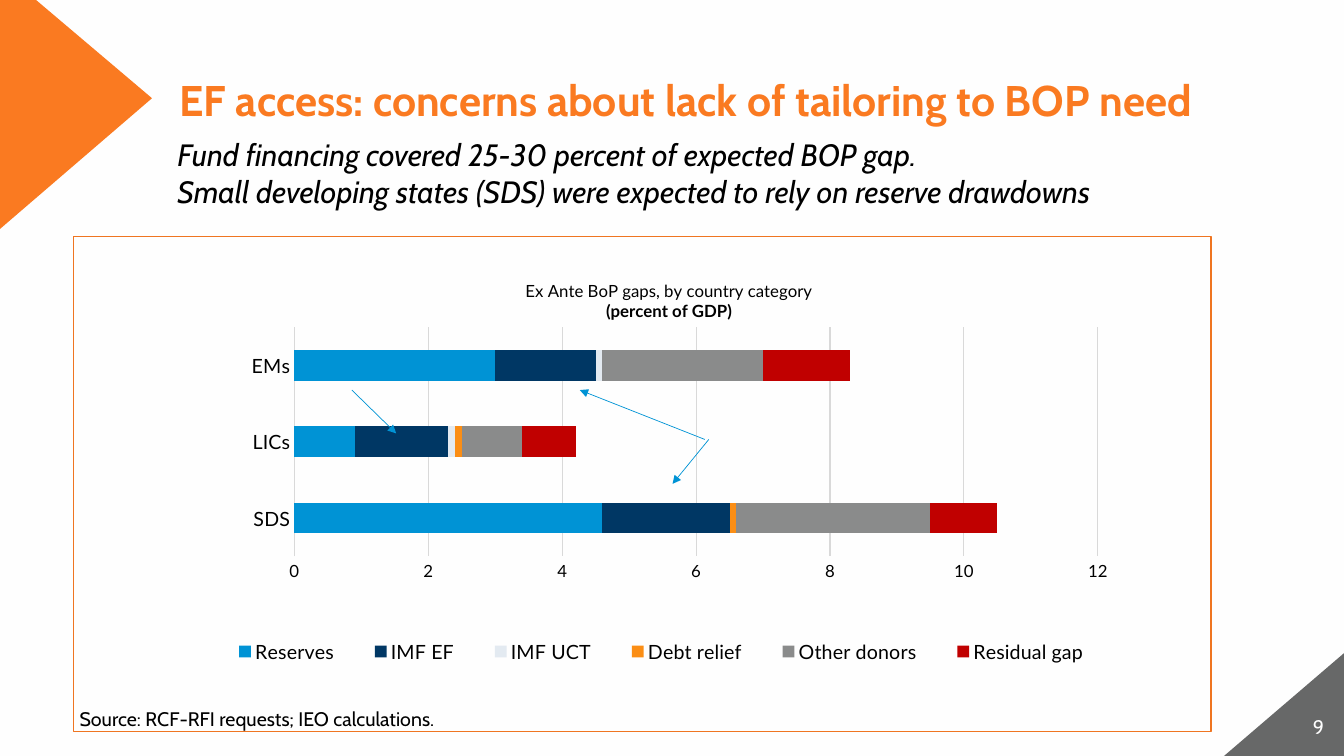
from lxml import etree
from pptx import Presentation
from pptx.chart.data import CategoryChartData
from pptx.dml.color import RGBColor
from pptx.enum.chart import XL_CHART_TYPE, XL_LEGEND_POSITION, XL_TICK_MARK
from pptx.enum.shapes import MSO_CONNECTOR, MSO_SHAPE
from pptx.enum.text import MSO_ANCHOR, PP_ALIGN
from pptx.oxml.ns import qn
from pptx.util import Inches, Pt

STACKED = XL_CHART_TYPE.BAR_STACKED
BOTTOM_LEGEND = XL_LEGEND_POSITION.BOTTOM
NO_TICK = XL_TICK_MARK.NONE
STRAIGHT = MSO_CONNECTOR.STRAIGHT
RECTANGLE = MSO_SHAPE.RECTANGLE
TOP, BOTTOM = MSO_ANCHOR.TOP, MSO_ANCHOR.BOTTOM
LEFT, RIGHT = PP_ALIGN.LEFT, PP_ALIGN.RIGHT

PAPER = RGBColor(0xFE, 0xFE, 0xFE)
INK = RGBColor(0x00, 0x00, 0x00)
ORANGE = RGBColor(0xFA, 0x7A, 0x21)
FRAME_ORANGE = RGBColor(0xEF, 0x75, 0x21)
CORNER_GRAY = RGBColor(0x67, 0x68, 0x68)
GRID_GRAY = RGBColor(0xD9, 0xD9, 0xD9)
BLUE = RGBColor(0x00, 0x93, 0xD5)
NAVY = RGBColor(0x00, 0x37, 0x64)
PALE = RGBColor(0xE3, 0xEA, 0xF1)
AMBER = RGBColor(0xFB, 0x8E, 0x15)
GRAY = RGBColor(0x8A, 0x8B, 0x8B)
RED = RGBColor(0xC0, 0x00, 0x00)
SLIDE_FONT, CHART_FONT = "Cabin", "Lato"

TITLE = "EF access: concerns about lack of tailoring to BOP need"
SUBTITLE = [
    "Fund financing covered 25-30 percent of expected BOP gap.",
    "Small developing states (SDS) were expected to rely on reserve drawdowns",
]
SOURCE = "Source: RCF-RFI requests; IEO calculations."
PAGE = "9"
CHART_TITLE = [("Ex Ante BoP gaps, by country category", False), ("(percent of GDP)", True)]
COUNTRY_GROUPS = ["SDS", "LICs", "EMs"]
FINANCING = [
    ("Reserves", (4.6, 0.9, 3), BLUE),
    ("IMF EF", (1.9, 1.4, 1.5), NAVY),
    ("IMF UCT", (0, 0.1, 0.1), PALE),
    ("Debt relief", (0.1, 0.1, 0), AMBER),
    ("Other donors", (2.9, 0.9, 2.4), GRAY),
    ("Residual gap", (1, 0.8, 1.3), RED),
]

# Positions are percentages of the slide's width and height.
TITLE_AREA = (13.35, 5.33, 80.2, 12)
SUBTITLE_AREA = (11.55, 17.33, 84.62, 11.33)
FRAME_AREA = (5.48, 31.33, 84.62, 65.47)
CHART_AREA = (12.3, 34.13, 73.82, 57.2)
SOURCE_AREA = (5.18, 92.8, 28.36, 4.53)
PAGE_AREA = (93.85, 93.87, 5.4, 4.53)
CORNERS = [
    (CORNER_GRAY, [(91.07, 100), (100, 86.4), (100, 100)]),
    (ORANGE, [(0, 0), (2.68, 0), (11.31, 13), (0, 30.29)]),
]
ARROWS = [
    ((52.44, 58.13), (43.14, 51.6)),
    ((52.74, 58.13), (50.04, 64)),
    ((26.18, 51.6), (29.48, 57.33)),
]

deck = Presentation()
deck.slide_width, deck.slide_height = Inches(13.33), Inches(7.5)
slide = deck.slides.add_slide(deck.slide_layouts[6])
slide.background.fill.solid()
slide.background.fill.fore_color.rgb = PAPER


def at(x, y):
    return round(deck.slide_width * x / 100), round(deck.slide_height * y / 100)


def spot(area):
    return *at(*area[:2]), *at(*area[2:])


def style_font(font, size, face=SLIDE_FONT, color=INK, bold=False, italic=False):
    font.size, font.name, font.bold, font.italic = Pt(size), face, bold, italic
    font.color.rgb = color


def write(shape, lines, size, anchor=TOP, align=LEFT, wrap=True, inset=0.1, indent=0, spacing=1, **style):
    frame = shape.text_frame
    frame.word_wrap, frame.vertical_anchor = wrap, anchor
    frame.margin_left = Inches(inset)
    for number, line in enumerate(lines):
        paragraph = frame.add_paragraph() if number else frame.paragraphs[0]
        paragraph.alignment, paragraph.line_spacing = align, spacing
        paragraph._p.get_or_add_pPr().set("marL", str(Inches(indent)))
        run = paragraph.add_run()
        run.text = line
        style_font(run.font, size, **style)


def add_panel(area, outline):
    panel = slide.shapes.add_shape(RECTANGLE, *spot(area))
    panel.shadow.inherit = False
    panel.fill.solid()
    panel.fill.fore_color.rgb = PAPER
    panel.line.color.rgb, panel.line.width = outline, Pt(1)
    return panel


def set_layout(part, index, inner=False, **shares):
    for old in part.findall(qn("c:layout")):
        part.remove(old)
    layout = etree.Element(qn("c:layout"))
    manual = etree.SubElement(layout, qn("c:manualLayout"))
    settings = {"layoutTarget": "inner"} if inner else {}
    settings.update(xMode="edge", yMode="edge", **shares)
    for tag, value in settings.items():
        etree.SubElement(manual, qn("c:" + tag)).set("val", str(value))
    part.insert(index, layout)


def add_gap_chart():
    gaps = CategoryChartData()
    gaps.categories = COUNTRY_GROUPS
    for name, values, _ in FINANCING:
        gaps.add_series(name, values)
    chart = slide.shapes.add_chart(STACKED, *spot(CHART_AREA), gaps).chart
    style_font(chart.font, 9, CHART_FONT)
    bars = chart.plots[0]
    bars.gap_width, bars.overlap, bars.vary_by_categories = 150, 100, False
    for series, (_, _, color) in zip(bars.series, FINANCING):
        series.format.fill.solid()
        series.format.fill.fore_color.rgb = color

    groups, percent = chart.category_axis, chart.value_axis
    for axis, size in ((groups, 14), (percent, 12)):
        axis.major_tick_mark = axis.minor_tick_mark = NO_TICK
        style_font(axis.tick_labels.font, size, CHART_FONT)
    percent.minimum_scale, percent.maximum_scale, percent.major_unit = 0, 12, 2
    percent.tick_labels.number_format = "0"
    percent.tick_labels.number_format_is_linked = False
    percent.format.line.fill.background()
    for line in (groups.format.line, percent.major_gridlines.format.line):
        line.color.rgb, line.width = GRID_GRAY, Pt(0.75)

    heading = chart.chart_title.text_frame
    for number, (text, bold) in enumerate(CHART_TITLE):
        paragraph = heading.add_paragraph() if number else heading.paragraphs[0]
        run = paragraph.add_run()
        run.text = text
        style_font(run.font, 12, CHART_FONT, bold=bold)
    chart.has_legend = True
    chart.legend.position, chart.legend.include_in_layout = BOTTOM_LEGEND, False
    style_font(chart.legend.font, 14, CHART_FONT)
    set_layout(chart.chart_title._element, 1, x=0.36, y=0.04)
    set_layout(chart.legend._element, 1, x=0.04, y=0.86, w=0.92, h=0.1)
    set_layout(chart._chartSpace.chart.plotArea, 0, inner=True, x=0.13, y=0.16, w=0.81, h=0.53)


def add_arrow(start, end):
    arrow = slide.shapes.add_connector(STRAIGHT, *at(*start), *at(*end))
    arrow.line.color.rgb, arrow.line.width = BLUE, Pt(0.5)
    etree.SubElement(arrow.line._get_or_add_ln(), qn("a:tailEnd")).set("type", "triangle")
    etree.SubElement(arrow._element.spPr, qn("a:effectLst"))


for color, points in CORNERS:
    outline = slide.shapes.build_freeform(*at(*points[0]), scale=1.0)
    outline.add_line_segments([at(*point) for point in points[1:]], close=True)
    corner = outline.convert_to_shape()
    corner.shadow.inherit = False
    corner.fill.solid()
    corner.fill.fore_color.rgb = color
    corner.line.fill.background()

write(slide.shapes.add_textbox(*spot(PAGE_AREA)), [PAGE], 14, align=RIGHT, color=PAPER)
write(slide.shapes.add_textbox(*spot(TITLE_AREA)), [TITLE], 30.6, anchor=BOTTOM, inset=0,
      spacing=0.9, color=ORANGE, bold=True)
write(add_panel(SUBTITLE_AREA, PAPER), SUBTITLE, 22, inset=0, indent=0.22, italic=True)
add_panel(FRAME_AREA, FRAME_ORANGE)
add_gap_chart()
write(slide.shapes.add_textbox(*spot(SOURCE_AREA)), [SOURCE], 14, wrap=False)
for start, end in ARROWS:
    add_arrow(start, end)

deck.save("out.pptx")
